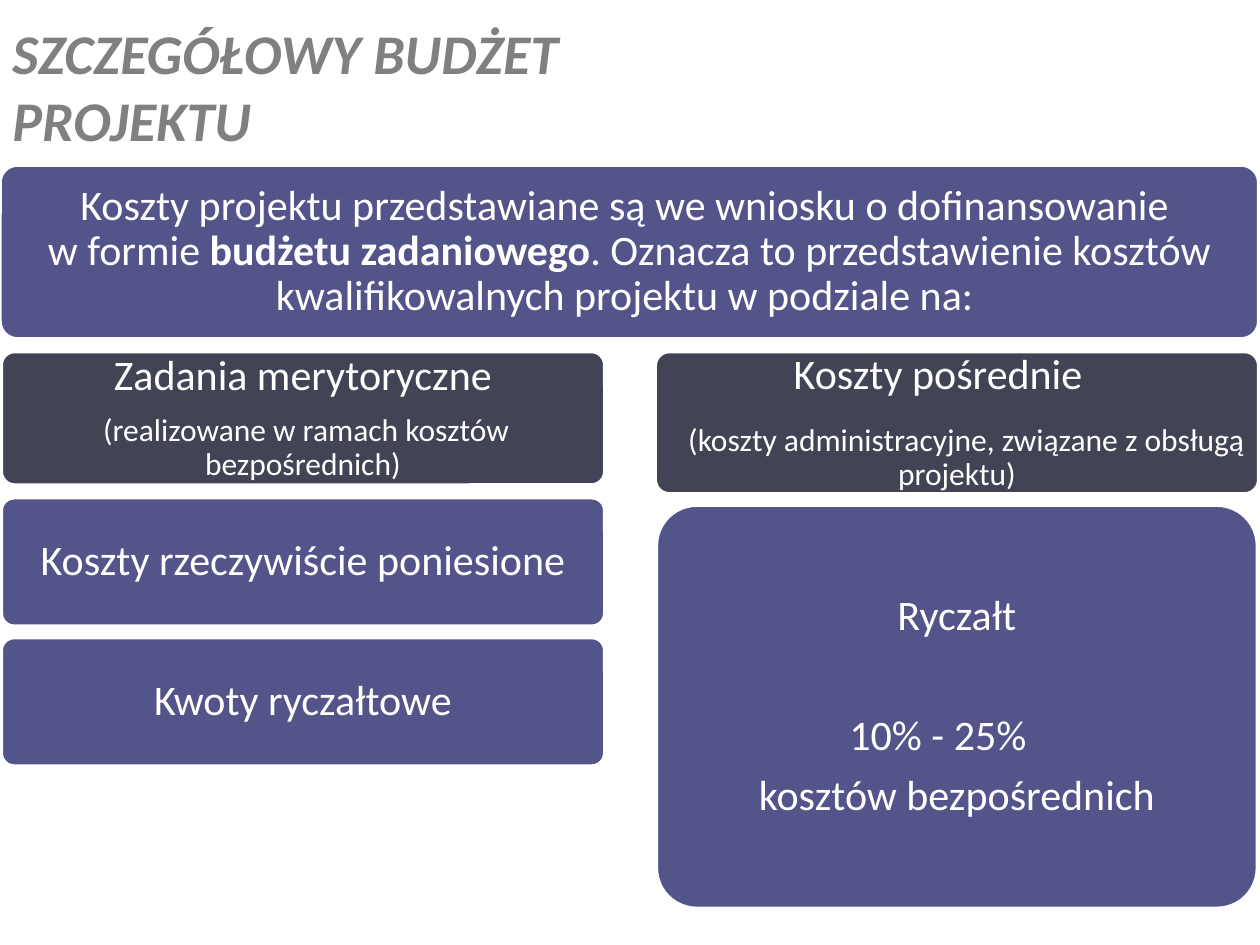
from dataclasses import dataclass

from pptx import Presentation
from pptx.dml.color import RGBColor
from pptx.enum import shapes, text
from pptx.util import Inches, Pt

FONT = "Calibri"
COLORS = {
    "title": "808080",
    "white": "FFFFFF",
    "violet": "53548A",
    "slate": "424456",
}


@dataclass
class Run:
    text: str
    size: float = 24
    bold: bool = False
    italic: bool = False
    color: str = "white"
    break_before: bool = False


@dataclass
class Para:
    runs: list[Run]
    after: float = 8.4
    indent: float = 0
    right: float = 0


@dataclass
class Box:
    left: float
    top: float
    width: float
    height: float
    fill: str
    paras: list[Para]


def rgb(name: str) -> RGBColor:
    return RGBColor.from_string(COLORS[name])


def add_run(p, run: Run) -> None:
    if run.break_before:
        p.add_line_break()
    r = p.add_run()
    r.text = run.text
    r.font.name = FONT
    r.font.size = Pt(run.size)
    r.font.bold = run.bold
    r.font.italic = run.italic
    r.font.color.rgb = rgb(run.color)


def add_para(tf, index: int):
    return tf.paragraphs[0] if index == 0 else tf.add_paragraph()


def draw_title(s, lines: list[str]) -> None:
    sp = s.shapes.add_textbox(Inches(0), Inches(0.21), Inches(10), Inches(0.94))
    tf = sp.text_frame
    tf.word_wrap = True
    tf.vertical_anchor = text.MSO_ANCHOR.MIDDLE
    for i, line in enumerate(lines):
        add_run(add_para(tf, i), Run(line, 32, True, True, "title"))


def draw_box(s, box: Box) -> None:
    sp = s.shapes.add_shape(
        shapes.MSO_SHAPE.ROUNDED_RECTANGLE,
        Inches(box.left), Inches(box.top), Inches(box.width), Inches(box.height),
    )
    sp.adjustments[0] = 0.1
    sp.shadow.inherit = False
    sp.fill.solid()
    sp.fill.fore_color.rgb = rgb(box.fill)
    sp.line.color.rgb = rgb("white")
    sp.line.width = Pt(2)
    tf = sp.text_frame
    tf.word_wrap = True
    tf.vertical_anchor = text.MSO_ANCHOR.MIDDLE
    margin = Inches(0.1 - 0.03 * box.height)
    tf.margin_left = tf.margin_right = margin
    tf.margin_top = tf.margin_bottom = margin
    for i, para in enumerate(box.paras):
        p = add_para(tf, i)
        p.alignment = text.PP_ALIGN.CENTER
        p.line_spacing = 0.9
        p.space_after = Pt(para.after)
        pPr = p._p.get_or_add_pPr()
        pPr.set("marR", str(Inches(para.right)))
        pPr.set("indent", str(Inches(para.indent)))
        for run in para.runs:
            add_run(p, run)


BOXES = [
    Box(0, 1.31, 9.99, 1.38, "violet", [
        Para([
            Run("Koszty projektu przedstawiane są we wniosku o dofinansowanie "),
            Run("w formie ", break_before=True),
            Run("budżetu zadaniowego", bold=True),
            Run(". Oznacza to przedstawienie kosztów kwalifikowalnych "
                "projektu w podziale na: "),
        ]),
    ]),
    Box(0.01, 2.79, 4.79, 1.06, "slate", [
        Para([Run("Zadania merytoryczne")]),
        Para([Run("(realizowane w ramach kosztów bezpośrednich)", 18)], indent=0.05),
    ]),
    Box(0.01, 3.95, 4.79, 1.02, "violet", [
        Para([Run("Koszty rzeczywiście poniesione")]),
    ]),
    Box(0.01, 5.06, 4.79, 1.02, "violet", [
        Para([Run("Kwoty ryczałtowe")]),
    ]),
    Box(5.2, 2.79, 4.79, 1.13, "slate", [
        Para([Run("Koszty pośrednie")], after=15, right=0.3),
        Para([Run("(koszty administracyjne, związane z obsługą projektu)", 18)],
             indent=0.15),
    ]),
    Box(5.21, 4.01, 4.77, 3.2, "violet", [
        Para([Run("Ryczałt")], after=42.5),
        Para([Run("10% - 25%")], right=0.3),
        Para([Run("kosztów bezpośrednich")]),
    ]),
]


def main() -> None:
    prs = Presentation()
    prs.slide_width = Inches(10)
    prs.slide_height = Inches(7.5)
    s = prs.slides.add_slide(prs.slide_layouts[6])
    draw_title(s, ["SZCZEGÓŁOWY BUDŻET", "PROJEKTU"])
    for box in BOXES:
        draw_box(s, box)
    prs.save("out.pptx")


if __name__ == "__main__":
    main()
